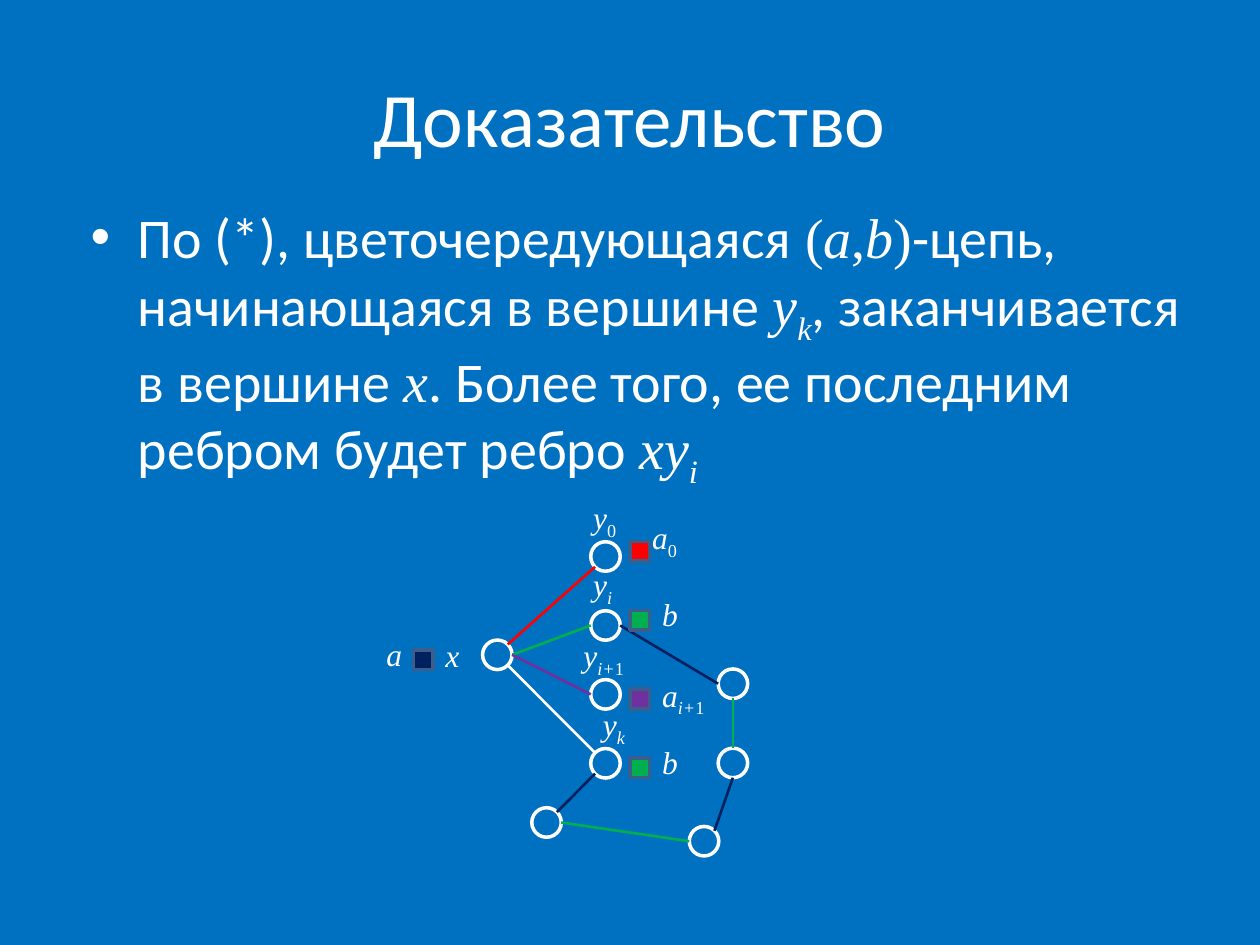
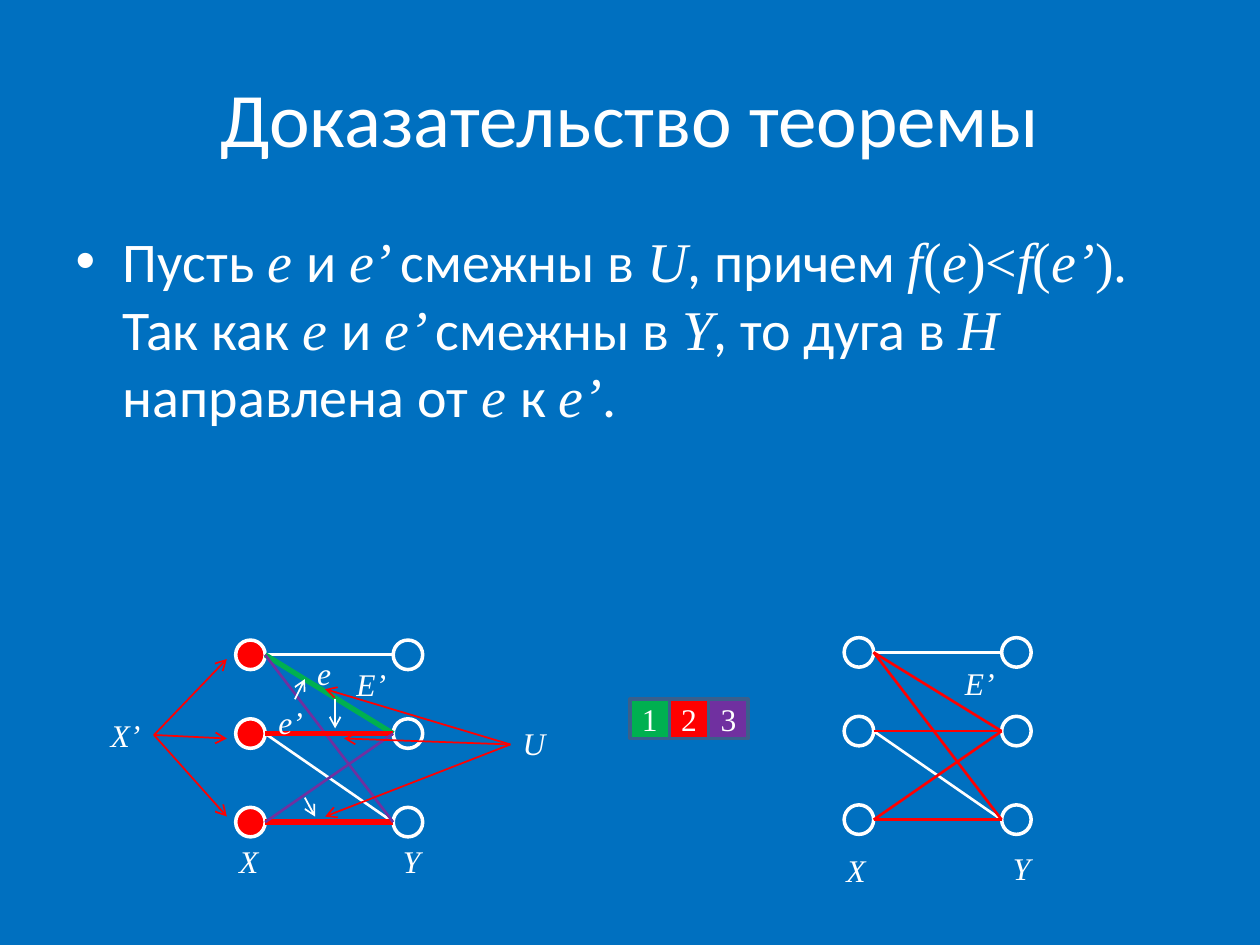
from dataclasses import dataclass
from math import sqrt

from lxml.etree import SubElement
from pptx import Presentation
from pptx.dml.color import RGBColor
from pptx.enum.shapes import MSO_CONNECTOR, MSO_SHAPE
from pptx.enum.text import MSO_ANCHOR, MSO_AUTO_SIZE, PP_ALIGN
from pptx.oxml.ns import qn
from pptx.util import Pt

# Shared look
BLUE, WHITE, RED, GREEN = "0070C0", "FFFFFF", "FF0000", "00B050"
PURPLE, NAVY, FRAME = "7030A0", "002060", "3A5F8C"
SANS, SERIF = "Calibri", "Times New Roman"
RADIUS = 8.44
CHIP = 11.25
# Leading mark of a text piece: (font, italic, subscript)
MARKS = {"/": (SERIF, True, False), "#": (SERIF, False, False),
         "_": (SERIF, True, True), "=": (SERIF, False, True)}
# Points on a circle, as steps from its centre
DIAG = sqrt(0.5)
SIDES = {"N": (0, -1), "S": (0, 1), "W": (-1, 0), "E": (1, 0),
         "NW": (-DIAG, -DIAG), "NE": (DIAG, -DIAG),
         "SW": (-DIAG, DIAG), "SE": (DIAG, DIAG)}


@dataclass
class Node:
    x: float
    y: float
    fill: str = BLUE

    def side(self, name: str) -> tuple[float, float]:
        dx, dy = SIDES[name]
        return self.x + RADIUS * dx, self.y + RADIUS * dy


@dataclass
class Label:
    text: str
    x: float
    y: float
    width: float = 33.8


@dataclass
class Edge:
    start: int
    end: int
    color: str = WHITE
    width: float = 1.5


def paint(color: str) -> RGBColor:
    return RGBColor.from_string(color)


def write(frame, text: str, size: float = 18, color: str = WHITE, align=None) -> None:
    """Write pieces parted by |, each styled by its leading mark."""
    para = frame.paragraphs[0]
    if align is not None:
        para.alignment = align
    for piece in text.split("|"):
        font, italic, sub = MARKS.get(piece[0], (SANS, False, False))
        run = para.add_run()
        run.text = piece[1:] if piece[0] in MARKS else piece
        run.font.name, run.font.size = font, Pt(size)
        run.font.italic = italic
        run.font.color.rgb = paint(color)
        if sub:
            run.font._element.set("baseline", "-25000")


def draw_shape(slide, kind, x: float, y: float, size: float, fill: str, line: str):
    shape = slide.shapes.add_shape(kind, Pt(x), Pt(y), Pt(size), Pt(size))
    shape.shadow.inherit = False
    shape.fill.solid()
    shape.fill.fore_color.rgb = paint(fill)
    shape.line.color.rgb = paint(line)
    shape.line.width = Pt(2)
    return shape


def draw_node(slide, node: Node) -> None:
    draw_shape(slide, MSO_SHAPE.OVAL, node.x - RADIUS, node.y - RADIUS,
               2 * RADIUS, node.fill, WHITE)


def draw_chip(slide, x: float, y: float, fill: str, size: float = CHIP):
    return draw_shape(slide, MSO_SHAPE.RECTANGLE, x, y, size, fill, FRAME)


def draw_line(slide, start: tuple[float, float], end: tuple[float, float],
              color: str, width: float = 1.5, arrow: bool = False) -> None:
    ends = [Pt(v) for v in (*start, *end)]
    link = slide.shapes.add_connector(MSO_CONNECTOR.STRAIGHT, *ends)
    link.line.color.rgb = paint(color)
    link.line.width = Pt(width)
    props = link._element.spPr
    if arrow:
        SubElement(props.find(qn("a:ln")), qn("a:tailEnd")).set("type", "arrow")
    SubElement(props, qn("a:effectLst"))


def draw_label(slide, label: Label, wrap: bool = False) -> None:
    box = slide.shapes.add_textbox(Pt(label.x), Pt(label.y), Pt(label.width), Pt(29))
    frame = box.text_frame
    frame.word_wrap = wrap
    frame.auto_size = MSO_AUTO_SIZE.SHAPE_TO_FIT_TEXT
    write(frame, label.text)


def draw_pairs(slide, left: float, top: float, fill: str, edges: list[Edge]) -> None:
    """Two columns of three nodes, X on the left and Y on the right."""
    rows = [top + step for step in (0, 45, 95.6)]
    xs = [Node(left, y, fill) for y in rows]
    ys = [Node(left + 90, y) for y in rows]
    for node in xs + ys:
        draw_node(slide, node)
    for edge in edges:
        draw_line(slide, xs[edge.start].side("E"), ys[edge.end].side("W"),
                  edge.color, edge.width)


def add_page(deck, title: str, body: str, box: tuple[float, float, float, float]):
    slide = deck.slides.add_slide(deck.slide_layouts[1])
    head, main = slide.shapes.title, slide.placeholders[1]
    places = ((head, (36, 21.6, 648, 90)), (main, box))
    for holder, place in places:
        holder.left, holder.top, holder.width, holder.height = map(Pt, place)
    write(head.text_frame, title, size=44, align=PP_ALIGN.CENTER)
    write(main.text_frame, body, size=32)
    return slide


deck = Presentation()
deck.slide_width, deck.slide_height = Pt(720), Pt(540)
back = deck.slide_master.background.fill
back.solid()
back.fore_color.rgb = paint(BLUE)

# Slide 1: alternating chain
chain = add_page(
    deck, "Доказательство",
    "По (*), цветочередующаяся |#(|/a|#,|/b|#)|-цепь, начинающаяся в вершине |/y|_k|"
    ", заканчивается в вершине |/x|. Более того, ее последним ребром будет ребро |/xy|_i",
    (44.6, 112.3, 648, 206))
FAN = ("y0", "yi", "next", "yk")
nodes = {name: Node(346, 318 + 39.4 * i) for i, name in enumerate(FAN)}
nodes |= {"x": Node(284.2, 374.2), "top": Node(418.8, 390.7), "mid": Node(418.8, 436),
          "left": Node(312.3, 470), "low": Node(402.3, 480.7)}
for node in nodes.values():
    draw_node(chain, node)

LINKS = [("x", "NE", "y0", "SW", RED), ("x", "E", "yi", "W", GREEN),
         ("x", "E", "next", "W", PURPLE), ("x", "SE", "yk", "NW", WHITE),
         ("yk", "SW", "left", "NE", NAVY), ("left", "E", "low", "W", GREEN),
         ("low", "NE", "mid", "S", NAVY), ("mid", "N", "top", "S", GREEN),
         ("top", "W", "yi", "E", NAVY)]
for start, out, end, into, color in LINKS:
    draw_line(chain, nodes[start].side(out), nodes[end].side(into), color)

for x, y, color in [(360, 309.4, RED), (360, 348.8, GREEN), (360, 393.8, PURPLE),
                    (360, 433.2, GREEN), (236.2, 371.3, NAVY)]:
    draw_chip(chain, x, y, color)

for label in [Label("/x", 247.5, 360, 20), Label("/a", 213.8, 359.3),
              Label("/y|=0", 331.9, 281.3), Label("/a|=0", 365.6, 292.5),
              Label("/y|_i", 331.9, 319.5), Label("/b", 371.3, 336.4),
              Label("/y|_i+|=1", 326.3, 360, 45), Label("/a|_i+|=1", 371.3, 382.5, 45),
              Label("/y|_k", 337.5, 399.4), Label("/b", 371.3, 421)]:
    draw_label(chain, label, wrap=True)

# Slide 2: two bipartite graphs
proof = add_page(
    deck, "Доказательство теоремы",
    "Пусть |/e |и |/e’ |смежны в |/U|, причем |/f|#(|/e|#)<|/f|#(|/e’|#). |"
    "Так как |/e |и |/e’ |смежны в |/Y|, то дуга в |/H |направлена от |/e |к |/e’|.",
    (36, 126, 648, 217.4))
draw_pairs(proof, 143.1, 374.2, RED, [
    Edge(0, 0), Edge(0, 1, GREEN, 3), Edge(1, 2), Edge(2, 2, RED, 3),
    Edge(0, 2, PURPLE), Edge(1, 1, RED, 3), Edge(2, 1, PURPLE)])
draw_pairs(proof, 490.8, 372.8, BLUE, [
    Edge(0, 0), Edge(0, 1, RED), Edge(1, 2), Edge(2, 2, RED),
    Edge(0, 2, RED), Edge(1, 1, RED), Edge(2, 1, RED)])

# Arrows from X’ and U, then arcs between edges
FROM_X, FROM_U = (88, 420), (291.6, 425.4)
POINTS = [(FROM_X, (129.6, 466.6), RED), (FROM_X, (129.6, 376.6), RED),
          (FROM_X, (129.6, 422), RED), (FROM_U, (185.8, 466.6), RED),
          (FROM_U, (185.8, 393.8), RED), (FROM_U, (196.6, 422), RED),
          ((168.5, 399.6), (174.2, 388.1), WHITE),
          ((174.2, 455.8), (180, 466.6), WHITE),
          ((191.5, 399.6), (191.5, 416.2), WHITE)]
for start, end, color in POINTS:
    draw_line(proof, start, end, color, width=1, arrow=True)

# Colour key
for i, color in enumerate((GREEN, RED, PURPLE)):
    chip = draw_chip(proof, 360 + 22.5 * i, 399.6, color, size=22.5)
    frame = chip.text_frame
    frame.margin_left = frame.margin_right = 0
    frame.vertical_anchor = MSO_ANCHOR.MIDDLE
    write(frame, f"#{i + 1}", align=PP_ALIGN.CENTER)

for label in [Label("/X", 129.6, 477.4, 26), Label("/Y", 223.2, 477.4, 24.5),
              Label("/E’", 196.6, 376.6, 31.7), Label("/X’", 56.2, 405.4, 31.7),
              Label("/U", 291.6, 410.4, 27.4), Label("/e", 174.2, 370, 22.3),
              Label("/e’", 152, 398.2, 28.8), Label("/X", 476.6, 483, 26),
              Label("/Y", 571.7, 481.7, 24.5), Label("/E’", 544.3, 375.8, 31.7)]:
    draw_label(proof, label)

deck.save("out.pptx")
